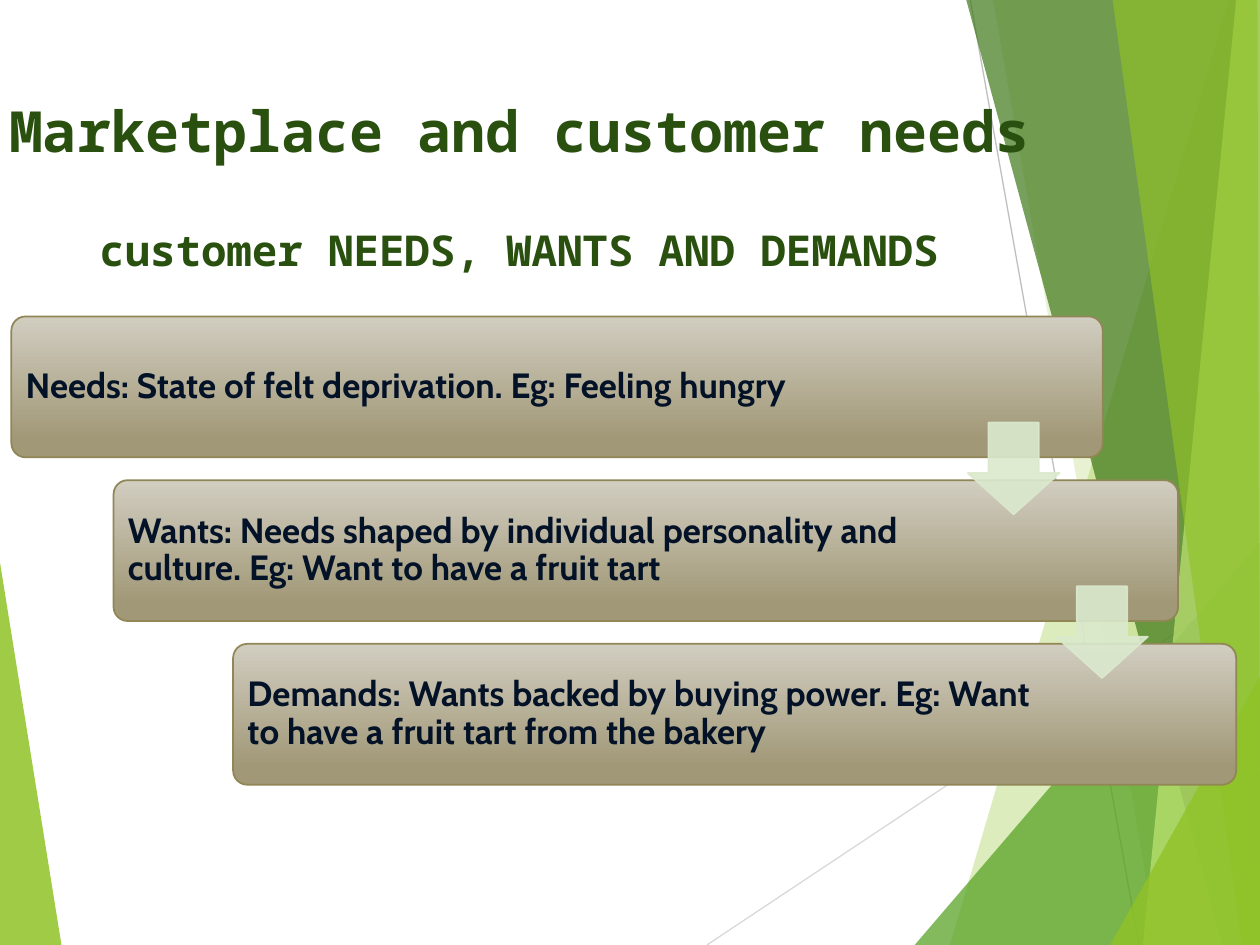
from pptx import Presentation
from pptx.dml.color import RGBColor
from pptx.enum.shapes import MSO_CONNECTOR as Connector, MSO_SHAPE as Shape
from pptx.enum.text import MSO_ANCHOR as Anchor, PP_ALIGN as Align
from pptx.oxml.ns import qn
from pptx.util import Cm, Pt
from lxml.etree import SubElement

LIME = RGBColor(0x90, 0xC2, 0x26)
GREEN = RGBColor(0x54, 0xA0, 0x21)
FOREST = RGBColor(0x3F, 0x78, 0x19)
PALE_LIME = RGBColor(0xC0, 0xE4, 0x74)
MINT = RGBColor(0xDB, 0xE9, 0xCD)
TITLE_GREEN = RGBColor(0x2A, 0x50, 0x10)
SAND = RGBColor(0xD1, 0xCD, 0xC0)
TAUPE = RGBColor(0xA1, 0x98, 0x77)
OLIVE = RGBColor(0x91, 0x86, 0x55)
NAVY = RGBColor(0x03, 0x12, 0x27)
LIGHT_GRAY = RGBColor(0xD9, 0xD9, 0xD9)
GRAY = RGBColor(0xBF, 0xBF, 0xBF)

WIDTH, HEIGHT, EDGE = 25.4, 19.05, 25.43

FACETS = [
    (LIME, 30, [(24.77, 0), (19.15, HEIGHT), (EDGE, HEIGHT), (EDGE, 0)]),
    (LIME, 20, [(20.02, 0), (23.34, HEIGHT), (EDGE, HEIGHT), (EDGE, 0)]),
    (GREEN, 72, [(18.44, HEIGHT), (EDGE, 10.9), (EDGE, HEIGHT)]),
    (FOREST, 70, [(19.48, 0), (24.64, HEIGHT), (EDGE, HEIGHT), (EDGE, 0)]),
    (PALE_LIME, 70, [(24.92, 0), (23.04, HEIGHT), (EDGE, HEIGHT), (EDGE, 0)]),
    (LIME, 65, [(22.43, 0), (25.04, HEIGHT), (WIDTH, HEIGHT), (25.35, 0)]),
    (LIME, 80, [(22.38, HEIGHT), (EDGE, 13.59), (EDGE, HEIGHT)]),
]

STEPS = [
    (0.23, 22, 18.69, "Needs: State of felt deprivation. Eg: Feeling hungry"),
    (2.29, 21.46, 17.45, "Wants: Needs shaped by individual personality and culture. "
                         "Eg: Want to have a fruit tart"),
    (4.7, 20.22, 16.43, "Demands: Wants backed by buying power. "
                        "Eg: Want to have a fruit tart from the bakery"),
]
STEP_TOP, STEP_PITCH, STEP_HEIGHT = 6.38, 3.3, 2.84
ARROW_LEFTS, ARROW_TOP, ARROW_SIZE = (19.51, 21.29), 8.52, 1.85


def write(p, text, font, size, color, align=Align.LEFT, spacing=1.0, before=0):
    p.alignment = align
    p.line_spacing = spacing
    p.space_before = Pt(before)
    r = p.add_run()
    r.text = text
    r.font.name = font
    r.font.size = Pt(size)
    r.font.bold = True
    r.font.color.rgb = color


def set_color(fill, color, opacity=100):
    fill.solid()
    fill.fore_color.rgb = color
    if opacity < 100:
        for clr in fill._xPr.iter(qn("a:srgbClr")):
            SubElement(clr, qn("a:alpha"), val=str(opacity * 1000))


class Painter:
    title_font = "Noto Sans Mono"
    body_font = "Cabin"

    def __init__(self, slide):
        self.shapes = slide.shapes

    def facet(self, color, opacity, points):
        corners = [(Cm(x), Cm(y)) for x, y in points]
        builder = self.shapes.build_freeform(*corners[0])
        builder.add_line_segments(corners[1:])
        sp = builder.convert_to_shape()
        sp.shadow.inherit = False
        set_color(sp.fill, color, opacity)
        sp.line.fill.background()

    def line(self, x1, y1, x2, y2, color):
        cxn = self.shapes.add_connector(Connector.STRAIGHT, Cm(x1), Cm(y1), Cm(x2), Cm(y2))
        cxn.line.color.rgb = color
        cxn.line.width = Pt(0.75)
        SubElement(cxn._element.spPr, qn("a:effectLst"))

    def preset(self, kind, left, top, width, height, adjustments):
        sp = self.shapes.add_shape(kind, Cm(left), Cm(top), Cm(width), Cm(height))
        sp.shadow.inherit = False
        sp.line.width = Pt(1)
        for i, value in enumerate(adjustments):
            sp.adjustments[i] = value
        return sp

    def text_box(self, left, top, width, height, inset, anchor):
        box = self.shapes.add_textbox(Cm(left), Cm(top), Cm(width), Cm(height))
        tf = box.text_frame
        tf.word_wrap = True
        tf.vertical_anchor = anchor
        tf.margin_left = tf.margin_right = tf.margin_top = tf.margin_bottom = Cm(inset)
        return tf

    def title(self, heading, subheading):
        tf = self.text_box(-1.24, 1.94, 23.42, 3.94, 0, Anchor.TOP)
        write(tf.paragraphs[0], heading, self.title_font, 32.4, TITLE_GREEN, Align.CENTER)
        write(tf.add_paragraph(), subheading, self.title_font, 24.3, TITLE_GREEN,
              Align.CENTER, before=34)

    def step(self, left, top, width, text_width, text):
        sp = self.preset(Shape.ROUNDED_RECTANGLE, left, top, width, STEP_HEIGHT, [0.1])
        sp.fill.gradient()
        sp.fill.gradient_angle = 270
        for stop, position, color in zip(sp.fill.gradient_stops, (0, 0.88), (SAND, TAUPE)):
            stop.position = position
            stop.color.rgb = color
        sp.line.color.rgb = OLIVE
        tf = self.text_box(left + 0.09, top + 0.09, text_width, STEP_HEIGHT - 0.18,
                           0.2, Anchor.MIDDLE)
        write(tf.paragraphs[0], text, self.body_font, 20, NAVY, spacing=0.9)

    def arrow(self, left, top):
        sp = self.preset(Shape.DOWN_ARROW, left, top, ARROW_SIZE, ARROW_SIZE, [0.55, 0.45])
        set_color(sp.fill, MINT, 90)
        set_color(sp.line.fill, MINT, 90)


def main():
    prs = Presentation()
    prs.slide_width, prs.slide_height = Cm(WIDTH), Cm(HEIGHT)
    s = Painter(prs.slides.add_slide(prs.slide_layouts[6]))

    s.facet(LIME, 85, [(-0.03, 11.15), (1.24, HEIGHT), (-0.03, HEIGHT)])
    s.line(14.25, HEIGHT, EDGE, 11.61, LIGHT_GRAY)
    s.line(19.56, 0, 22.96, HEIGHT, GRAY)
    for facet in FACETS:
        s.facet(*facet)

    s.title("Marketplace and customer needs", "customer NEEDS, WANTS AND DEMANDS")
    for i, (left, width, text_width, text) in enumerate(STEPS):
        s.step(left, STEP_TOP + i * STEP_PITCH, width, text_width, text)
    for i, left in enumerate(ARROW_LEFTS):
        s.arrow(left, ARROW_TOP + i * STEP_PITCH)

    prs.save("out.pptx")


if __name__ == "__main__":
    main()
